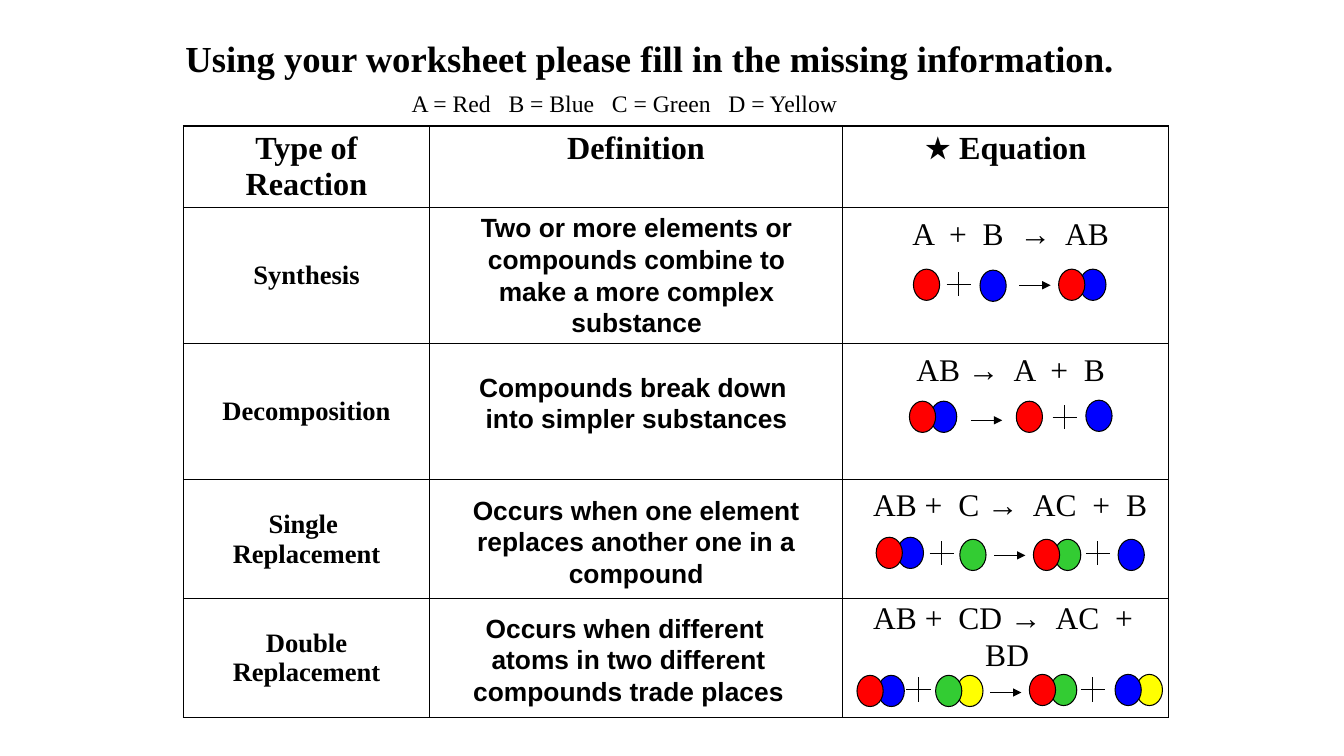
"""Build a slide with a table of reaction types and their coloured models."""
from dataclasses import dataclass

from lxml.etree import SubElement
from pptx import Presentation
from pptx.dml.color import RGBColor as RGB
from pptx.enum.shapes import MSO_CONNECTOR as Line, MSO_SHAPE as Shape
from pptx.enum.text import MSO_ANCHOR as Anchor, PP_ALIGN as Align
from pptx.oxml.ns import qn
from pptx.util import Inches, Pt


@dataclass(frozen=True)
class Theme:
    serif: str = "Times New Roman"
    sans: str = "Arial"
    ink: RGB = RGB(0, 0, 0)
    paper: RGB = RGB(255, 255, 255)
    title: float = 26.2
    key: float = 16.9
    head: float = 23
    name: float = 19
    body: float = 18.8
    sum: float = 22.5


theme = Theme()
atoms = {
    "A": RGB(255, 0, 0),
    "B": RGB(0, 0, 255),
    "C": RGB(0x33, 0xCC, 0x33),
    "D": RGB(255, 255, 0),
}


def write(frame, text, size, face=theme.serif, bold=False, align=Align.CENTER):
    frame.word_wrap = True
    frame.text = text
    for para in frame.paragraphs:
        para.alignment = align
        font = para.font
        font.name, font.size, font.bold = face, Pt(size), bold
        font.color.rgb = theme.ink


def stroke(shapes, x1, y1, x2, y2, arrow=False):
    line = shapes.add_connector(Line.STRAIGHT, Inches(x1), Inches(y1), Inches(x2), Inches(y2))
    line.line.color.rgb = theme.ink
    line.line.width = Pt(0.75)
    if arrow:
        SubElement(line.line._get_or_add_ln(), qn("a:tailEnd"), type="triangle")
    SubElement(line._element.spPr, qn("a:effectLst"))


deck = Presentation()
deck.slide_width, deck.slide_height = Inches(13.33), Inches(7.5)
slide = deck.slides.add_slide(deck.slide_layouts[6])
shapes = slide.shapes

widths = [2.44, 4.1, 3.23]
heights = [0.81, 1.35, 1.35, 1.18, 1.18]
heads = ["Type of Reaction", "Definition", "★ Equation"]
names = ["Synthesis", "Decomposition", "Single \vReplacement", "Double Replacement"]

table = shapes.add_table(
    5, 3, Inches(1.82), Inches(1.25), Inches(sum(widths)), Inches(sum(heights))
).table
table.first_row = table.horz_banding = False
for col, width in zip(table.columns, widths):
    col.width = Inches(width)
for row, height in zip(table.rows, heights):
    row.height = Inches(height)
for cell in table.iter_cells():
    props = cell._tc.get_or_add_tcPr()
    for side in ("a:lnL", "a:lnR", "a:lnT", "a:lnB"):
        edge = SubElement(props, qn(side), w=str(Pt(1)))
        fill = SubElement(edge, qn("a:solidFill"))
        SubElement(fill, qn("a:srgbClr"), val=str(theme.ink))
    cell.fill.background()

for i, head in enumerate(heads):
    write(table.cell(0, i).text_frame, head, theme.head, bold=True)
para = table.cell(0, 2).text_frame.paragraphs[0]
star, label = heads[2].split()
para.runs[0].text = star + " "
para.runs[0].font.bold = False
para.add_run().text = label
for i, name in enumerate(names, 1):
    cell = table.cell(i, 0)
    cell.vertical_anchor = Anchor.MIDDLE
    write(cell.text_frame, name, theme.name, bold=True)

title = shapes.add_textbox(Inches(1.74), Inches(0.31), Inches(9.88), Inches(0.54))
write(title.text_frame, "Using your worksheet please fill in the missing information.",
      theme.title, bold=True, align=Align.LEFT)

key = shapes.add_shape(Shape.RECTANGLE, Inches(2.99), Inches(0.83), Inches(6.47), Inches(0.39))
key.shadow.inherit = False
key.fill.solid()
key.fill.fore_color.rgb = theme.paper
key.line.fill.background()
write(key.text_frame, "A = Red   B = Blue   C = Green   D = Yellow ", theme.key)

models = [
    [("A", 9.06, 2.67), ("+", 9.51, 2.82), ("B", 9.72, 2.68),
     ("→", 10.11, 2.83), ("AB", 10.5, 2.67)],
    [("AB", 9.02, 3.98), ("→", 9.63, 4.17), ("A", 10.08, 3.98),
     ("+", 10.56, 4.14), ("B", 10.77, 3.97)],
    [("AB", 8.69, 5.33), ("+", 9.34, 5.49), ("C", 9.52, 5.35), ("→", 9.86, 5.51),
     ("AC", 10.25, 5.35), ("+", 10.89, 5.49), ("B", 11.09, 5.35)],
    [("AB", 8.5, 6.7), ("+", 9.11, 6.84), ("CD", 9.28, 6.7), ("→", 9.82, 6.87),
     ("AC", 10.21, 6.69), ("+", 10.84, 6.84), ("BD", 11.06, 6.69)],
]
for model in models:
    group = shapes.add_group_shape().shapes
    for part, x, y in model:
        if part == "+":
            stroke(group, x, y - 0.12, x, y + 0.12)
            stroke(group, x - 0.12, y, x + 0.12, y)
        elif part == "→":
            stroke(group, x, y, x + 0.31, y, arrow=True)
        else:
            for i, atom in reversed(list(enumerate(part))):
                ball = group.add_shape(Shape.OVAL, Inches(x + 0.21 * i), Inches(y),
                                       Inches(0.26), Inches(0.31))
                ball.shadow.inherit = False
                ball.fill.solid()
                ball.fill.fore_color.rgb = atoms[atom]
                ball.line.color.rgb = theme.ink
                ball.line.width = Pt(0.75)

sums = [
    ("A  +  B  →  AB", 8.62, 2.07, 2.81, 0.48),
    ("AB →  A  +  B", 8.62, 3.42, 2.81, 0.48),
    ("AB +  C →  AC  +  B", 8.34, 4.76, 3.36, 0.48),
    ("AB +  CD →  AC  +  BD", 8.31, 5.88, 3.36, 0.86),
]
texts = [
    ("Two or more elements or compounds combine to make a more complex substance",
     4.4, 2.05, 3.83, 1.36),
    ("Compounds break down \ninto simpler substances", 4.4, 3.63, 3.83, 0.73),
    ("Occurs when one element replaces another one in a compound", 4.32, 4.85, 3.98, 1.05),
    ("Occurs when different \vatoms in two different compounds trade places",
     4.32, 6.02, 3.83, 1.05),
]
for items, size, face, bold in (
    (sums, theme.sum, theme.serif, False),
    (texts, theme.body, theme.sans, True),
):
    for text, *place in items:
        box = shapes.add_textbox(*map(Inches, place))
        write(box.text_frame, text, size, face, bold)

deck.save("out.pptx")
